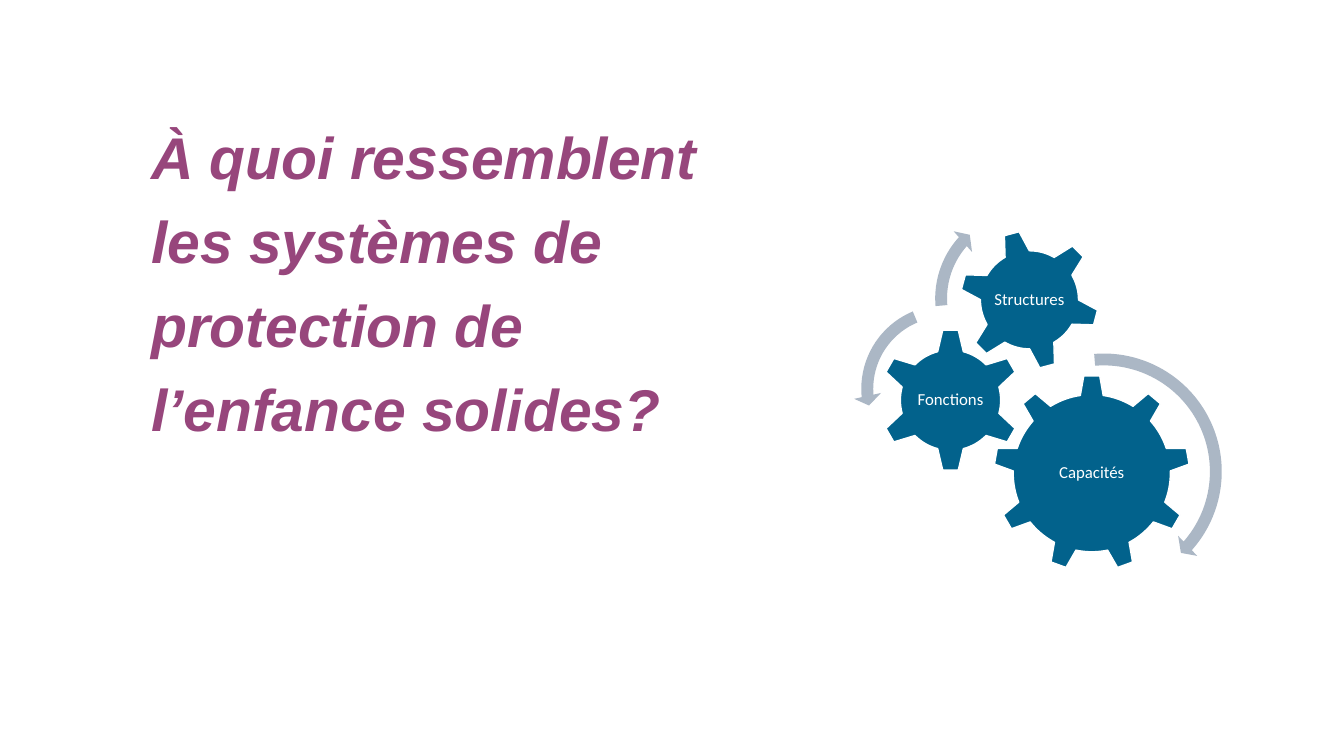
from dataclasses import dataclass

from pptx import Presentation
from pptx.dml.color import RGBColor
from pptx.enum.shapes import MSO_SHAPE
from pptx.enum.text import MSO_ANCHOR, PP_ALIGN
from pptx.util import Cm, Pt

GEAR_SIX = MSO_SHAPE.GEAR_6
GEAR_NINE = MSO_SHAPE.GEAR_9
ARC = MSO_SHAPE.CIRCULAR_ARROW
LEFT_ARC = MSO_SHAPE.LEFT_CIRCULAR_ARROW
MIDDLE = MSO_ANCHOR.MIDDLE
CENTER = PP_ALIGN.CENTER


@dataclass(frozen=True)
class Theme:
    """Colours, fonts and type sizes of the slide."""
    plum: RGBColor = RGBColor(0x97, 0x46, 0x7C)
    blue: RGBColor = RGBColor(0x02, 0x62, 0x8C)
    grey: RGBColor = RGBColor(0xAB, 0xB7, 0xC5)
    white: RGBColor = RGBColor(0xFF, 0xFF, 0xFF)
    head: str = "Arial"
    body: str = "Calibri"
    big: int = 42
    small: int = 12


THEME = Theme()

GEARS = [
    ("Capacités", GEAR_NINE, 3.54, 4.45, 4.95, 0),
    ("Fonctions", GEAR_SIX, 0.65, 3.28, 3.61, 0),
    ("Structures", GEAR_SIX, 2.68, 0.79, 3.53, 345),
]
ARCS = [
    (ARC, 3.14, 3.71, 6.35, (0.047, 2.99, 24.884, 159.225, 0.055)),
    (LEFT_ARC, 0.01, 2.49, 4.62, (0.065, 4.3, 104.891, 148.378, 0.075)),
    (ARC, 1.87, 0.03, 4.98, (0.06, 3.941, 133.138, 105.082, 0.07)),
]


def add_text(slide, text, box, font, size, color):
    """Add a wrapped text box and return its frame and run."""
    frame = slide.shapes.add_textbox(*map(Cm, box)).text_frame
    frame.word_wrap = True
    frame.text = text
    run = frame.paragraphs[0].runs[0]
    run.font.name = font
    run.font.size = Pt(size)
    run.font.color.rgb = color
    return frame, run


def add_form(slide, kind, box, color):
    """Add a flat preset shape without an outline."""
    form = slide.shapes.add_shape(kind, *map(Cm, box))
    form.shadow.inherit = False
    form.fill.solid()
    form.fill.fore_color.rgb = color
    form.line.fill.background()
    return form


def add_title(slide, box):
    """Place the question in the given box."""
    text = "À quoi ressemblent les systèmes de protection de l’enfance solides?"
    frame, run = add_text(slide, text, box, THEME.head, THEME.big, THEME.plum)
    frame.paragraphs[0].line_spacing = 1.19
    run.font.bold = True
    run.font.italic = True


def add_gear(slide, text, kind, box, turn):
    """Place one gear with an upright label at its centre."""
    gear = add_form(slide, kind, box, THEME.blue)
    gear.line.color.rgb = THEME.white
    gear.line.width = Pt(1)
    gear.rotation = turn
    frame, run = add_text(slide, text, box, THEME.body, THEME.small, THEME.white)
    frame.vertical_anchor = MIDDLE
    frame.paragraphs[0].alignment = CENTER
    frame.paragraphs[0].line_spacing = 0.9


def add_train(slide, left, top):
    """Place the gears and their turning arrows from the given corner."""
    for text, kind, x, y, size, turn in GEARS:
        add_gear(slide, text, kind, (left + x, top + y, size, size), turn)
    for kind, x, y, size, values in ARCS:
        arc = add_form(slide, kind, (left + x, top + y, size, size), THEME.grey)
        for i, value in enumerate(values):
            arc.adjustments[i] = value


def main():
    """Build and save the slide."""
    deck = Presentation()
    deck.slide_width = Cm(33.87)
    deck.slide_height = Cm(19.05)
    slide = deck.slides.add_slide(deck.slide_layouts[6])
    add_title(slide, (3.56, 2.59, 15.77, 7.85))
    add_train(slide, 21.5, 5)
    deck.save("out.pptx")


if __name__ == "__main__":
    main()
